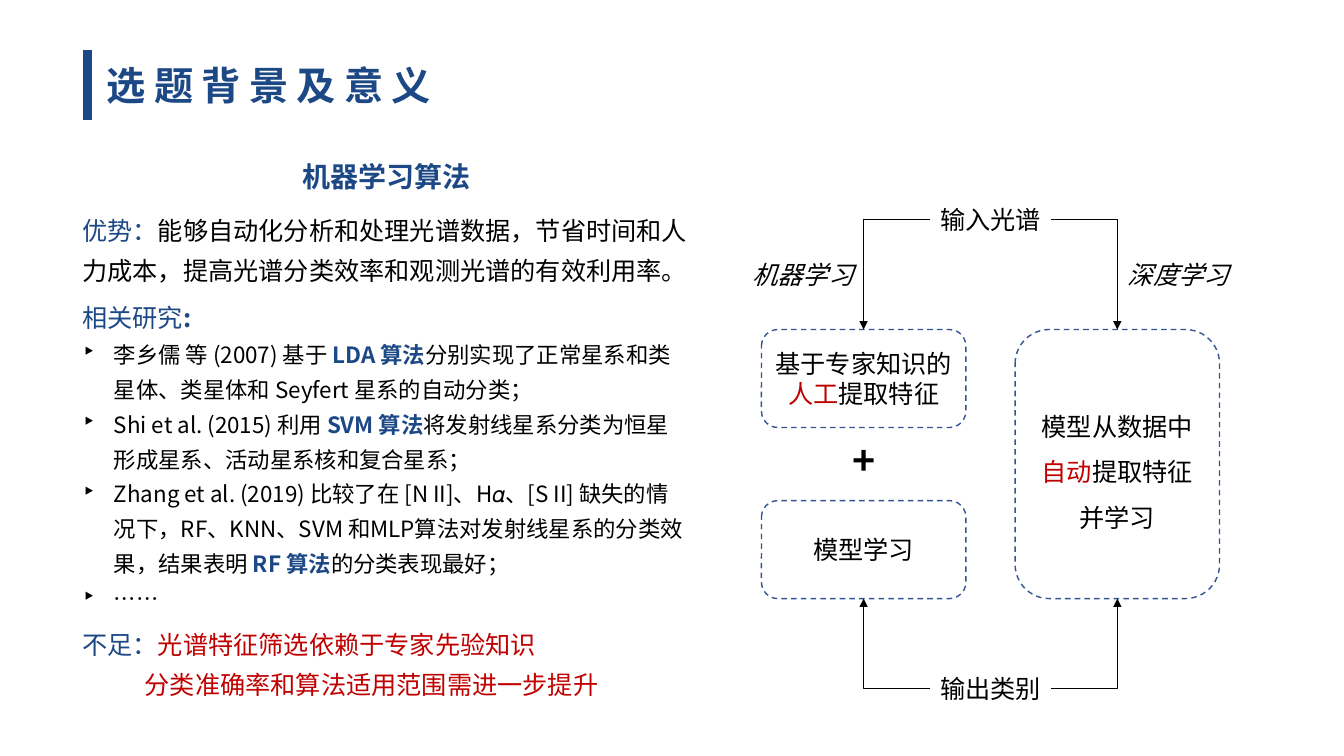
from dataclasses import dataclass

from lxml.etree import SubElement
from pptx import Presentation
from pptx.dml.color import RGBColor
from pptx.enum.dml import MSO_LINE
from pptx.enum.shapes import MSO_CONNECTOR, MSO_SHAPE
from pptx.enum.text import MSO_ANCHOR, PP_ALIGN
from pptx.oxml.ns import qn
from pptx.util import Pt


@dataclass(frozen=True)
class Theme:
    """Colours, fonts and type sizes of the deck."""
    blue: str = "1C4885"
    outline: str = "325491"
    red: str = "C00000"
    black: str = "000000"
    font: str = "Noto Sans CJK SC"
    latin: str = "Lato"
    title: int = 28
    heading: int = 20
    body: int = 18
    detail: int = 16


@dataclass(frozen=True)
class Box:
    """A rectangle in points."""
    left: float
    top: float
    width: float
    height: float

    @property
    def center(self):
        """Return the horizontal centre."""
        return self.left + self.width / 2

    @property
    def middle(self):
        """Return the vertical centre."""
        return self.top + self.height / 2

    @property
    def bottom(self):
        """Return the lower edge."""
        return self.top + self.height

    def lengths(self):
        """Return left, top, width and height as lengths."""
        return Pt(self.left), Pt(self.top), Pt(self.width), Pt(self.height)


THEME = Theme()


def add_span(para, text, size=THEME.body, color=THEME.black, bold=False,
             italic=False, latin=THEME.font, spacing=0):
    """Add one formatted run to a paragraph."""
    span = para.add_run()
    span.text = text
    font = span.font
    font.size, font.bold, font.italic, font.name = Pt(size), bold, italic, latin
    font.color.rgb = RGBColor.from_string(color)
    properties = span._r.get_or_add_rPr()
    SubElement(properties, qn("a:ea")).set("typeface", THEME.font)
    if spacing:
        properties.set("spc", str(spacing * 100))


def fill_frame(frame, paragraphs, align=PP_ALIGN.CENTER, line_spacing=1.0):
    """Write paragraphs of (text, format) runs into a text frame."""
    frame.vertical_anchor = MSO_ANCHOR.MIDDLE
    for index, runs in enumerate(paragraphs):
        para = frame.add_paragraph() if index else frame.paragraphs[0]
        para.alignment, para.line_spacing = align, line_spacing
        for text, style in runs:
            add_span(para, text, **style)


def add_label(page, box, text, align=PP_ALIGN.CENTER, **style):
    """Add a one-line text box."""
    label = page.shapes.add_textbox(*box.lengths())
    label.text_frame.word_wrap = False
    fill_frame(label.text_frame, [[(text, style)]], align)


def add_line(page, kind, start, end, color, width):
    """Add a connector without a shadow."""
    line = page.shapes.add_connector(kind, *map(Pt, start + end))
    line.line.color.rgb = RGBColor.from_string(color)
    line.line.width = Pt(width)
    SubElement(line._element.spPr, qn("a:effectLst"))
    return line


def add_elbow(page, start, end):
    """Add an arrow that runs sideways first and then up or down."""
    arrow = add_line(page, MSO_CONNECTOR.ELBOW, start, end, THEME.black, 0.5)
    arrow._element.spPr.find(qn("a:prstGeom")).set("prst", "bentConnector2")
    SubElement(arrow.line._get_or_add_ln(), qn("a:tailEnd")).set("type", "triangle")


def add_step(page, box, paragraphs, line_spacing=1.0):
    """Add a dashed rounded box with centred text."""
    step = page.shapes.add_shape(MSO_SHAPE.ROUNDED_RECTANGLE, *box.lengths())
    step.shadow.inherit = False
    step.fill.background()
    step.line.color.rgb = RGBColor.from_string(THEME.outline)
    step.line.width = Pt(1)
    step.line.dash_style = MSO_LINE.DASH
    step.text_frame.word_wrap = False
    fill_frame(step.text_frame, paragraphs, line_spacing=line_spacing)


def add_title(page, box):
    """Add the slide title with its bar on the left."""
    add_line(page, MSO_CONNECTOR.STRAIGHT, (box.left, box.top),
             (box.left, box.bottom), THEME.blue, 6)
    text_box = Box(box.left + 6.5, box.top, box.width - 6.5, box.height)
    add_label(page, text_box, "选题背景及意义", PP_ALIGN.LEFT, size=THEME.title,
              color=THEME.blue, bold=True, spacing=6)


def set_bullet(para):
    """Give a paragraph a hanging triangle bullet."""
    properties = para._p.get_or_add_pPr()
    properties.set("marL", str(Pt(22.5)))
    properties.set("indent", str(-Pt(22.5)))
    SubElement(properties, qn("a:buChar")).set("char", "‣")


def add_review(page, box):
    """Add the machine learning column: strengths, studies and limits."""
    add_label(page, Box(box.left, box.top, box.width, 31.7), "机器学习算法",
              size=THEME.heading, color=THEME.blue, bold=True)
    blue, red = {"color": THEME.blue}, {"color": THEME.red}
    detail = {"size": THEME.detail}
    method = {"size": THEME.detail, "color": THEME.blue, "bold": True}
    studies = [
        [("李乡儒 等 (2007) 基于 ", detail), ("LDA 算法", method),
         ("分别实现了正常星系和类星体、类星体和 Seyfert 星系的自动分类；", detail)],
        [("Shi et al. (2015) 利用 ", detail), ("SVM 算法", method),
         ("将发射线星系分类为恒星形成星系、活动星系核和复合星系；", detail)],
        [("Zhang et al. (2019) 比较了在 [N II]、H𝛼、[S II] 缺失的情况下，"
          "RF、KNN、SVM 和MLP算法对发射线星系的分类效果，结果表明 ", detail),
         ("RF 算法", method), ("的分类表现最好；", detail)],
        [("……", detail)],
    ]
    strengths = [
        [("优势：", blue),
         ("能够自动化分析和处理光谱数据，节省时间和人力成本，"
          "提高光谱分类效率和观测光谱的有效利用率。", {"latin": THEME.latin})],
        [("相关研究", blue), (":", {"color": THEME.blue, "bold": True})],
    ]
    limits = [
        [("不足：", blue), ("光谱特征筛选依赖于专家先验知识", red)],
        [("分类准确率和算法适用范围需进一步提升", red)],
    ]
    body_box = Box(box.left, box.top + 33.8, box.width, box.height - 33.8)
    frame = page.shapes.add_textbox(*body_box.lengths()).text_frame
    frame.word_wrap = True
    fill_frame(frame, strengths + studies + limits, PP_ALIGN.LEFT, 1.3)
    frame.vertical_anchor = MSO_ANCHOR.TOP
    paras = frame.paragraphs
    last_study = len(strengths) + len(studies)
    for para in paras[len(strengths):last_study]:
        set_bullet(para)
    for para in (paras[0], paras[last_study - 1]):
        para.space_after = Pt(6)
    paras[-1]._p.get_or_add_pPr().set("marL", str(Pt(44.5)))


def add_comparison(page, box):
    """Add the flow that compares machine learning with deep learning."""
    step_width, step_height, label_width, label_height = 146, 70, 87, 28.8
    steps_top, steps_height = box.top + 92.8, 192.2
    machine_center, deep_center = box.center - 90.6, box.center + 90.6
    machine_left = machine_center - step_width / 2
    extract = Box(machine_left, steps_top, step_width, step_height)
    learn = Box(machine_left, steps_top + steps_height - step_height,
                step_width, step_height)
    deep = Box(deep_center - step_width / 2, steps_top, step_width, steps_height)
    red = {"color": THEME.red}
    add_step(page, extract, [[("基于专家知识的", {})],
                             [("人工", red), ("提取特征", {})]])
    add_step(page, learn, [[("模型学习", {})]])
    add_step(page, deep, [[("模型从数据中", {})],
                          [("自动", red), ("提取特征", {})],
                          [("并学习", {})]], 1.5)
    gap = Box(machine_left, extract.bottom - 3, step_width,
              learn.top - extract.bottom)
    add_label(page, gap, "+", size=THEME.title, bold=True)

    label_left = box.center - label_width / 2
    ends = (("输入光谱", box.top, steps_top),
            ("输出类别", box.bottom - label_height, deep.bottom))
    for text, top, target in ends:
        label = Box(label_left, top, label_width, label_height)
        add_label(page, label, text)
        for center, side in ((machine_center, -1), (deep_center, 1)):
            start = label.center + side * label_width / 2
            add_elbow(page, (start, label.middle), (center, target))

    branches = (("机器学习", box.left), ("深度学习", deep_center))
    for text, left in branches:
        add_label(page, Box(left, box.top + 38.8, label_width, label_height),
                  text, italic=True)


def main():
    """Build the slide and save the deck."""
    deck = Presentation()
    deck.slide_width, deck.slide_height = Pt(960), Pt(540)
    page = deck.slides.add_slide(deck.slide_layouts[6])
    add_title(page, Box(62.6, 36, 540, 49.7))
    add_review(page, Box(51.8, 110.2, 448.6, 396))
    add_comparison(page, Box(530, 142.6, 355, 363.6))
    deck.save("out.pptx")


if __name__ == "__main__":
    main()
